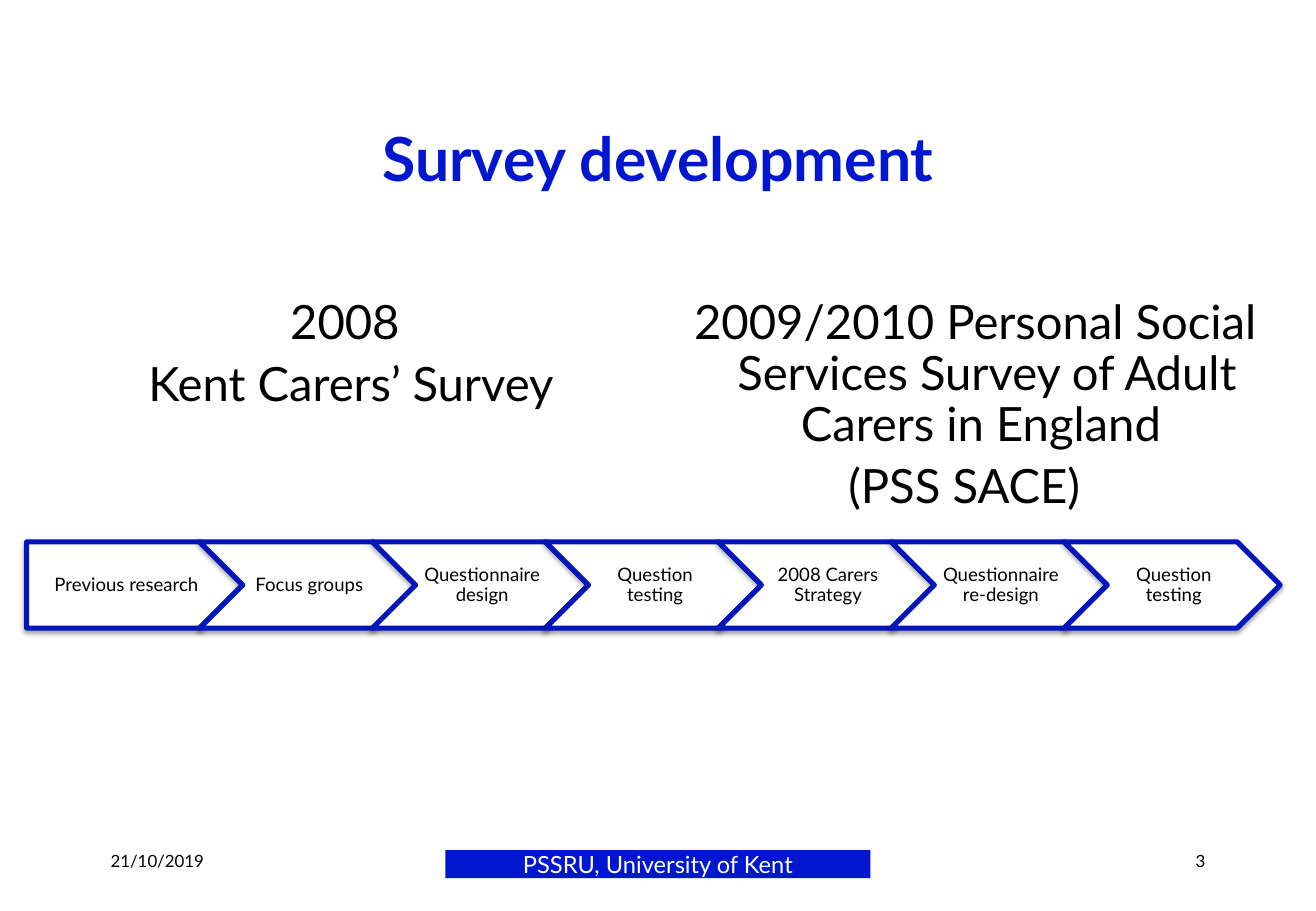
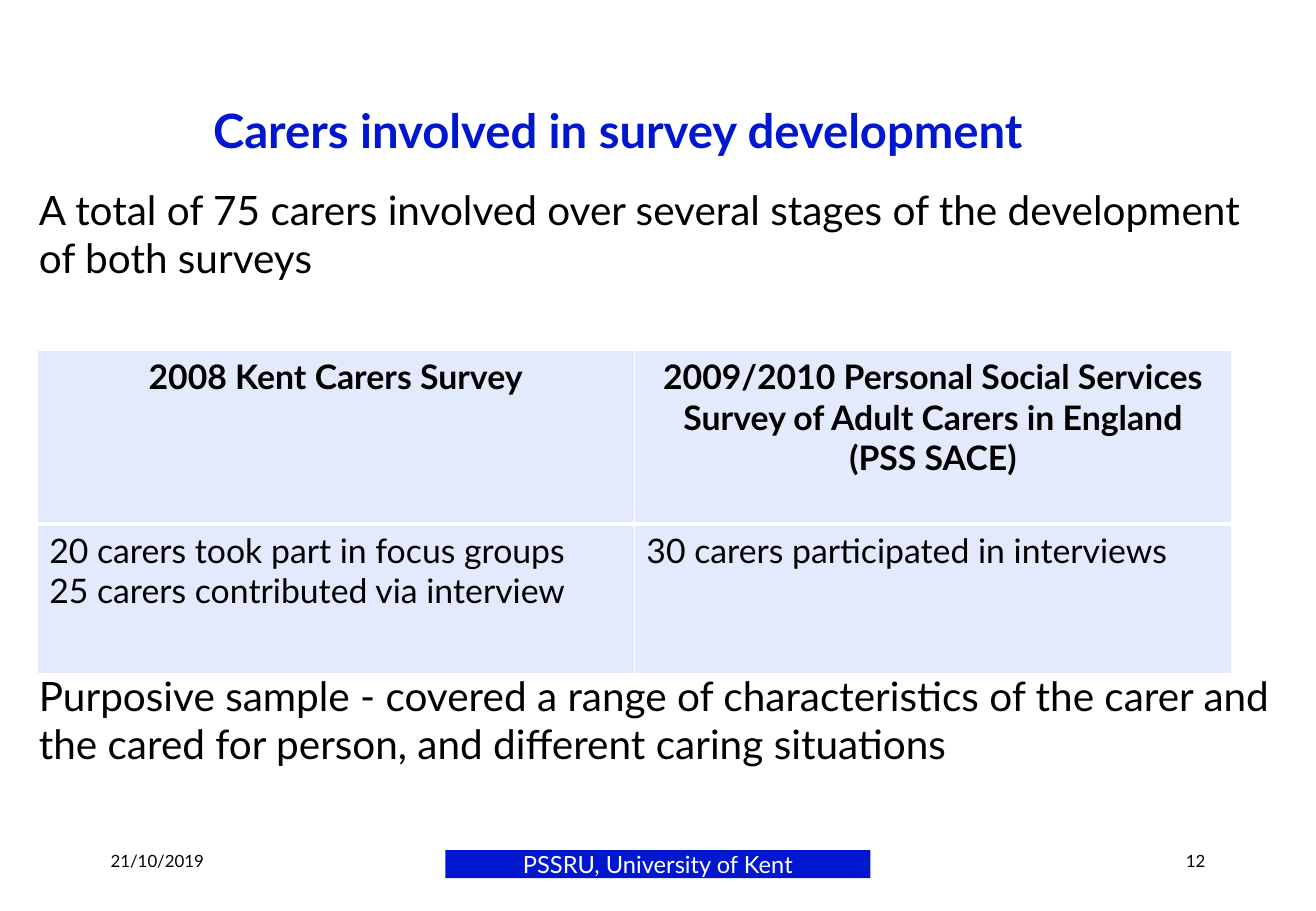
from dataclasses import dataclass

from lxml.etree import SubElement
from pptx import Presentation
from pptx.dml.color import RGBColor
from pptx.enum.shapes import MSO_SHAPE
from pptx.enum.text import MSO_ANCHOR, PP_ALIGN
from pptx.oxml.ns import qn
from pptx.shapes.autoshape import Shape
from pptx.slide import Slide
from pptx.table import _Cell
from pptx.text.text import TextFrame
from pptx.util import Pt

BLUE = RGBColor(0x00, 0x17, 0xCF)
EDGE = RGBColor(0x00, 0x15, 0xBC)
PALE = RGBColor(0xE2, 0xEA, 0xFC)
BLACK = RGBColor(0, 0, 0)
WHITE = RGBColor(255, 255, 255)
FONT = "Lato"
LEFT, MID, RIGHT = PP_ALIGN.LEFT, PP_ALIGN.CENTER, PP_ALIGN.RIGHT


@dataclass(frozen=True)
class Box:
    left: float
    top: float
    width: float
    height: float

    def points(self) -> tuple[Pt, Pt, Pt, Pt]:
        return Pt(self.left), Pt(self.top), Pt(self.width), Pt(self.height)


@dataclass(frozen=True)
class Style:
    size: float
    color: RGBColor = BLACK
    bold: bool = False
    align: PP_ALIGN = LEFT
    pitch: float = 1.0
    after: float = 0


@dataclass(frozen=True)
class Line:
    text: str
    indent: float = 0


@dataclass(frozen=True)
class Step:
    label: str
    kind: MSO_SHAPE = MSO_SHAPE.CHEVRON
    inset: float = 3.4


SMALL = Style(10)
LEAD = Style(24)
BODY = Style(28, align=MID, pitch=0.9, after=6.5)
LABEL = Style(11, align=MID, pitch=0.9)
HEAD = Style(20, bold=True, align=MID)
CELL = Style(20)
HANG = 27.0

STEPS = [
    Step("Previous research", MSO_SHAPE.PENTAGON, 4.4),
    Step("Focus groups"),
    Step("Questionnaire design"),
    Step("Question testing"),
    Step("2008 Carers Strategy"),
    Step("Questionnaire re-design"),
    Step("Question testing"),
]
ROWS = [
    [["2008 Kent Carers Survey"],
     ["2009/2010 Personal Social Services Survey of Adult Carers in England (PSS SACE)"]],
    [["20 carers took part in focus groups", "25 carers contributed via interview"],
     ["30 carers participated in interviews"]],
]


# Text
def fill_text(frame: TextFrame, lines: list[Line], style: Style) -> None:
    frame.word_wrap = True
    for i, line in enumerate(lines):
        para = frame.paragraphs[0] if i == 0 else frame.add_paragraph()
        para.text = line.text
        para.alignment = style.align
        para.line_spacing = style.pitch
        para.space_after = Pt(style.after)
        if line.indent:
            props = para._p.get_or_add_pPr()
            props.set("marL", str(Pt(HANG)))
            props.set("indent", str(Pt(line.indent)))
        font = para.font
        font.name, font.size, font.bold = FONT, Pt(style.size), style.bold
        font.color.rgb = style.color


def set_inset(frame: TextFrame, left: float, right: float, edge: float) -> None:
    frame.margin_left, frame.margin_right = Pt(left), Pt(right)
    frame.margin_top = frame.margin_bottom = Pt(edge)


def add_text(slide: Slide, box: Box, lines: list[Line], style: Style,
             anchor: MSO_ANCHOR = MSO_ANCHOR.TOP) -> None:
    frame = slide.shapes.add_textbox(*box.points()).text_frame
    frame.vertical_anchor = anchor
    fill_text(frame, lines, style)


# Shapes
def add_form(slide: Slide, kind: MSO_SHAPE, box: Box, color: RGBColor) -> Shape:
    shape = slide.shapes.add_shape(kind, *box.points())
    shape.shadow.inherit = False
    shape.fill.solid()
    shape.fill.fore_color.rgb = color
    shape.line.fill.background()
    return shape


def add_shade(shape: Shape) -> None:
    effects = shape._element.spPr.find(qn("a:effectLst"))
    shade = SubElement(effects, qn("a:outerShdw"), blurRad=str(Pt(3.1)),
                       dist=str(Pt(1.6)), dir="5400000", rotWithShape="0")
    color = SubElement(shade, qn("a:srgbClr"), val=str(BLACK))
    SubElement(color, qn("a:alpha"), val="38000")


def add_step(slide: Slide, step: Step, box: Box) -> None:
    shape = add_form(slide, step.kind, box, WHITE)
    shape.line.color.rgb = EDGE
    shape.line.width = Pt(3)
    add_shade(shape)
    frame = shape.text_frame
    frame.vertical_anchor = MSO_ANCHOR.MIDDLE
    set_inset(frame, step.inset, 1.4, 2)
    fill_text(frame, [Line(step.label)], LABEL)


# Table
def set_edges(cell: _Cell, top: float, bottom: float) -> None:
    props = cell._tc.get_or_add_tcPr()
    for side, width in (("L", 1), ("R", 1), ("T", top), ("B", bottom)):
        edge = SubElement(props, qn(f"a:ln{side}"), w=str(Pt(width)))
        paint = SubElement(edge, qn("a:solidFill"))
        SubElement(paint, qn("a:srgbClr"), val=str(WHITE))


def add_grid(slide: Slide, box: Box, heights: list[float]) -> None:
    table = slide.shapes.add_table(2, 2, *box.points()).table
    table.horz_banding = False
    for r, row in enumerate(ROWS):
        table.rows[r].height = Pt(heights[r])
        for c, texts in enumerate(row):
            cell = table.cell(r, c)
            set_edges(cell, 3 if r else 1, 1 if r else 3)
            cell.fill.solid()
            cell.fill.fore_color.rgb = PALE
            fill_text(cell.text_frame, [Line(t) for t in texts], CELL if r else HEAD)


# Shared frame of each slide
def add_page(deck: Presentation, title: str, spot: Box, size: float, number: int) -> Slide:
    slide = deck.slides.add_slide(deck.slide_layouts[6])
    band = add_form(slide, MSO_SHAPE.RECTANGLE, Box(264, 504, 252, 16.5), BLUE)
    band.text_frame.vertical_anchor = MSO_ANCHOR.TOP
    set_inset(band.text_frame, 0, 0, 0)
    fill_text(band.text_frame, [Line("PSSRU, University of Kent")],
              Style(14, WHITE, align=MID))
    middle = MSO_ANCHOR.MIDDLE
    add_text(slide, spot, [Line(title)], Style(size, BLUE, True, MID), middle)
    add_text(slide, Box(58.5, 492, 162.5, 36), [Line("21/10/2019")], SMALL, middle)
    add_text(slide, Box(559, 492, 162.5, 36), [Line(str(number))],
             Style(10, align=RIGHT), middle)
    return slide


def add_survey(deck: Presentation) -> None:
    slide = add_page(deck, "Survey development", Box(58.5, 48, 663, 90), 36, 3)
    add_text(slide, Box(38, 173.5, 340, 324),
             [Line("2008 ", -HANG), Line("Kent Carers’ Survey", -HANG)], BODY)
    add_text(slide, Box(390, 173.5, 363, 324),
             [Line("2009/2010 Personal Social Services Survey of Adult Carers in England ", -14),
              Line("(PSS SACE)", -HANG)], BODY)
    width = 128.1
    for i, step in enumerate(STEPS):
        add_step(slide, step, Box(15.8 + i * width * 0.8, 321.2, width, 51.2))


def add_carers(deck: Presentation) -> None:
    slide = add_page(deck, "Carers involved in survey development ",
                     Box(38, 32, 663, 90), 28, 12)
    add_text(slide, Box(16, 106, 748, 65),
             [Line("A total of 75 carers involved over several stages of the "
                   "development of both surveys")], LEAD)
    add_grid(slide, Box(22, 207.5, 708, 192), [103, 89])
    add_text(slide, Box(16, 394, 748, 65),
             [Line("Purposive sample - covered a range of characteristics of the carer "
                   "and the cared for person, and different caring situations")], LEAD)


def main() -> None:
    deck = Presentation()
    deck.slide_width, deck.slide_height = Pt(780), Pt(540)
    add_survey(deck)
    add_carers(deck)
    deck.save("out.pptx")


if __name__ == "__main__":
    main()
